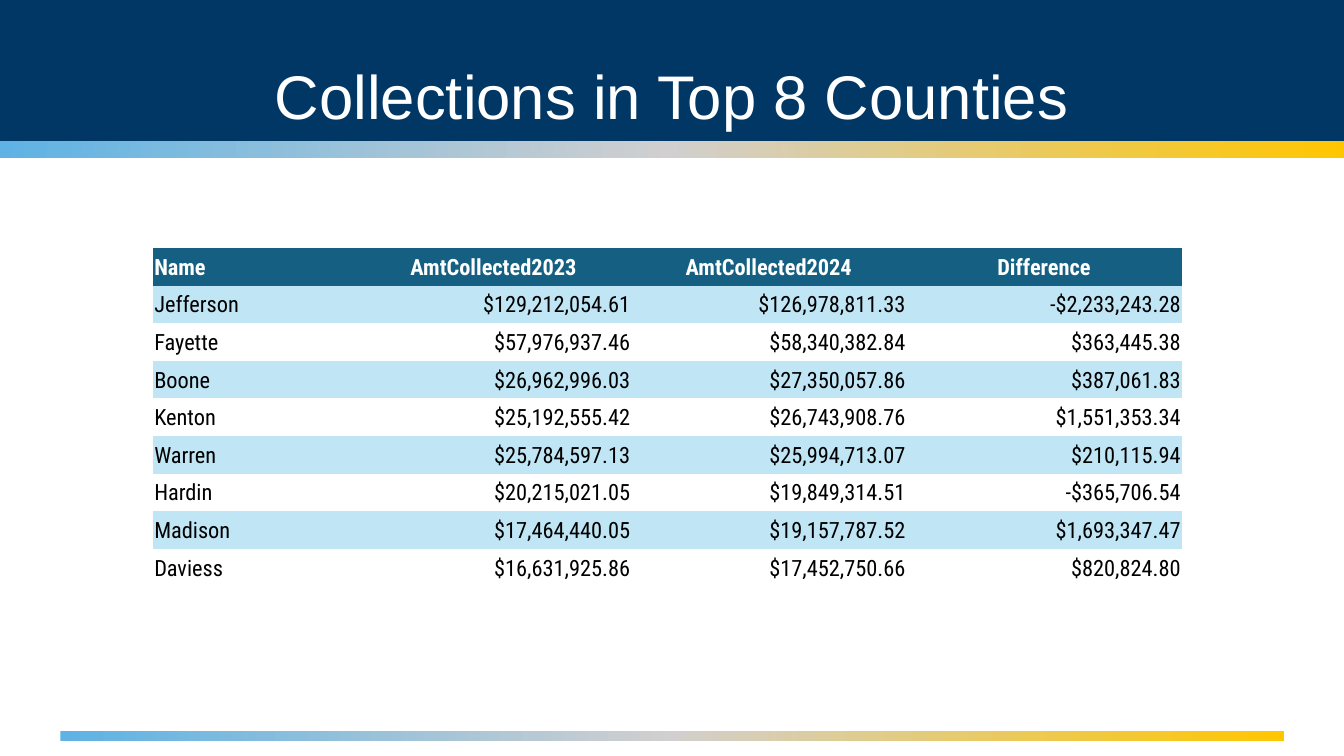
from copy import deepcopy
from dataclasses import dataclass

from pptx import Presentation
from pptx.dml.color import RGBColor
from pptx.enum.shapes import MSO_SHAPE
from pptx.enum.text import MSO_ANCHOR, PP_ALIGN
from pptx.oxml.ns import qn
from pptx.util import Inches, Pt


@dataclass(frozen=True)
class Theme:
    navy: str = "003764"
    gradient: tuple = ("5EB3E4", "D1CFCF", "FFC600")
    header: str = "156082"
    band: str = "C0E6F5"
    light: str = "FFFFFF"
    dark: str = "000000"
    title_font: str = "Arial"
    table_font: str = "Roboto Condensed"
    title_size: int = 44
    table_size: int = 16
    plain_table_style: str = "{2D5ABB26-0587-4C30-8999-92F81FD0307C}"


class SlideBuilder:
    def __init__(self, slide, theme):
        self.slide = slide
        self.theme = theme

    def apply(self, target, values):
        for name, value in values.items():
            setattr(target, name, value)

    def add_text(self, frame, text, align, color, font, size, bold=False):
        paragraph = frame.paragraphs[0]
        paragraph.alignment = align
        run = paragraph.add_run()
        run.text = text
        self.apply(run.font, {"name": font, "size": Pt(size), "bold": bold})
        run.font.color.rgb = RGBColor.from_string(color)
        return paragraph

    def bar(self, left, top, width, height):
        bar = self.slide.shapes.add_shape(
            MSO_SHAPE.RECTANGLE, *map(Inches, (left, top, width, height))
        )
        bar.shadow.inherit = False
        bar.line.fill.background()
        return bar

    def solid_bar(self, *box):
        fill = self.bar(*box).fill
        fill.solid()
        fill.fore_color.rgb = RGBColor.from_string(self.theme.navy)

    def gradient_bar(self, *box):
        bar = self.bar(*box)
        bar.fill.gradient()
        bar.fill.gradient_angle = 0
        stop_list = next(bar._element.iter(qn("a:gsLst")))
        stop_list.insert(1, deepcopy(stop_list[0]))
        colors = self.theme.gradient
        for index, (stop, color) in enumerate(zip(bar.fill.gradient_stops, colors)):
            stop.position = index / (len(colors) - 1)
            stop.color.rgb = RGBColor.from_string(color)

    def title(self, text, *box):
        frame = self.slide.shapes.add_textbox(*map(Inches, box)).text_frame
        self.apply(frame, {"word_wrap": True, "vertical_anchor": MSO_ANCHOR.MIDDLE})
        theme = self.theme
        heading = self.add_text(
            frame, text, PP_ALIGN.CENTER, theme.light, theme.title_font, theme.title_size
        )
        heading.line_spacing = 0.9

    def table(self, rows, column_widths, left, top, height):
        frame = self.slide.shapes.add_table(
            len(rows), len(column_widths),
            *map(Inches, (left, top, sum(column_widths), height)),
        )
        style_id = next(frame._element.iter(qn("a:tableStyleId")))
        style_id.text = self.theme.plain_table_style
        for column, width in zip(frame.table.columns, column_widths):
            column.width = Inches(width)
        for row_index, row in enumerate(rows):
            for column_index, text in enumerate(row):
                cell = frame.table.cell(row_index, column_index)
                self.table_cell(cell, text, row_index, column_index)

    def table_cell(self, cell, text, row_index, column_index):
        theme = self.theme
        is_header = row_index == 0
        self.apply(cell, {
            "margin_left": Inches(0.01),
            "margin_top": Inches(0.01),
            "margin_right": Inches(0.01),
            "margin_bottom": Inches(0.05),
            "vertical_anchor": MSO_ANCHOR.BOTTOM,
        })
        if is_header or row_index % 2:
            cell.fill.solid()
            color = theme.header if is_header else theme.band
            cell.fill.fore_color.rgb = RGBColor.from_string(color)
        else:
            cell.fill.background()
        amount_align = PP_ALIGN.CENTER if is_header else PP_ALIGN.RIGHT
        self.add_text(
            cell.text_frame, text,
            amount_align if column_index else PP_ALIGN.LEFT,
            theme.light if is_header else theme.dark,
            theme.table_font, theme.table_size, is_header,
        )


COLLECTIONS = [
    ("Name", "AmtCollected2023", "AmtCollected2024", "Difference"),
    ("Jefferson", "$129,212,054.61", "$126,978,811.33", "-$2,233,243.28"),
    ("Fayette", "$57,976,937.46", "$58,340,382.84", "$363,445.38"),
    ("Boone", "$26,962,996.03", "$27,350,057.86", "$387,061.83"),
    ("Kenton", "$25,192,555.42", "$26,743,908.76", "$1,551,353.34"),
    ("Warren", "$25,784,597.13", "$25,994,713.07", "$210,115.94"),
    ("Hardin", "$20,215,021.05", "$19,849,314.51", "-$365,706.54"),
    ("Madison", "$17,464,440.05", "$19,157,787.52", "$1,693,347.47"),
    ("Daviess", "$16,631,925.86", "$17,452,750.66", "$820,824.80"),
]


def main():
    deck = Presentation()
    slide_width = 13.33
    deck.slide_width = Inches(slide_width)
    deck.slide_height = Inches(7.5)
    builder = SlideBuilder(deck.slides.add_slide(deck.slide_layouts[6]), Theme())
    builder.solid_bar(0, 0, slide_width, 1.4)
    builder.gradient_bar(0, 1.4, slide_width, 0.17)
    builder.gradient_bar(0.6, 7.25, 12.14, 0.1)
    builder.table(COLLECTIONS, [2.01] + [2.73] * 3, 1.52, 2.46, 3.36)
    builder.title("Collections in Top 8 Counties", 0, 0.39, slide_width, 1.19)
    deck.save("out.pptx")


if __name__ == "__main__":
    main()
